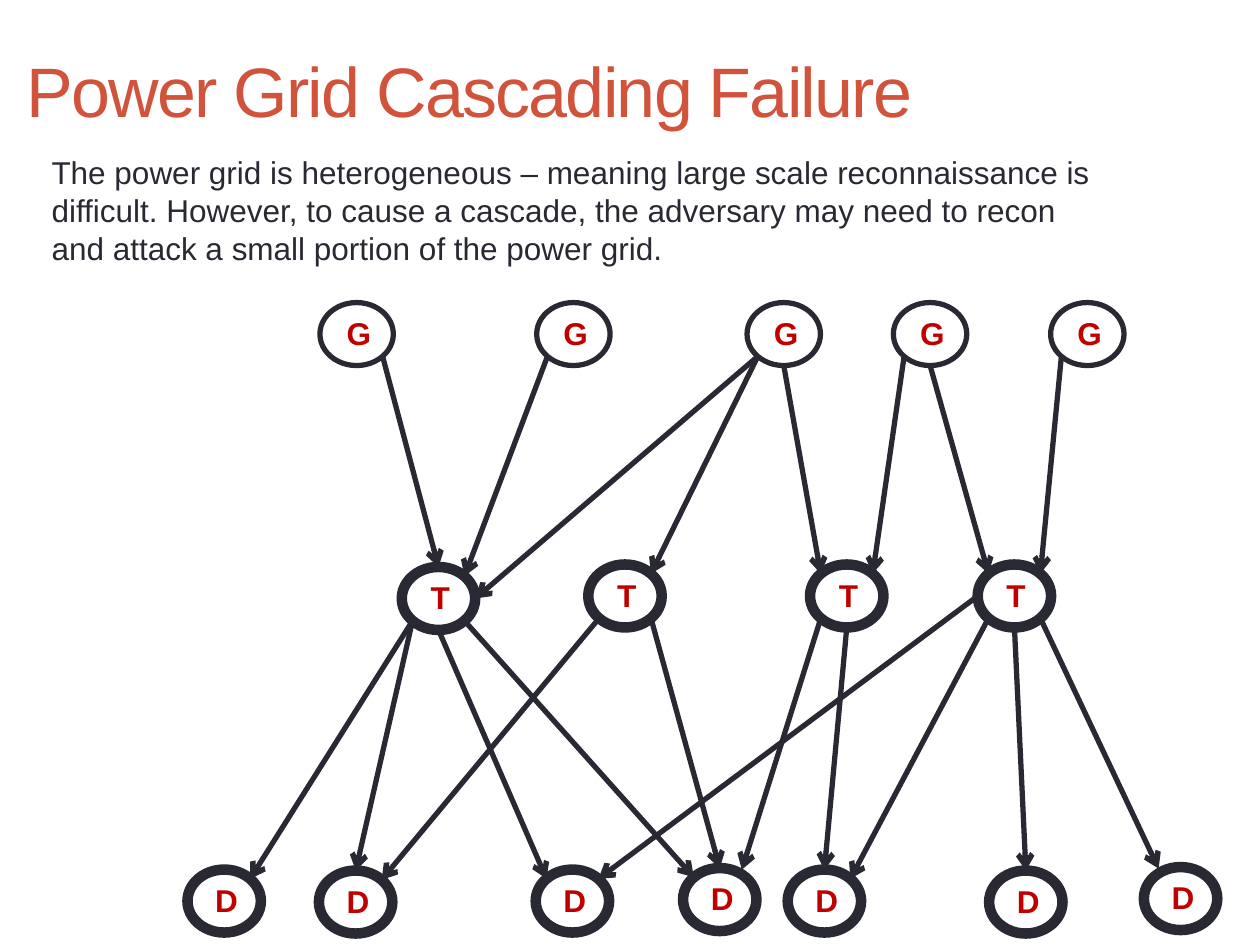
import math
from dataclasses import dataclass

import lxml.etree
import pptx
import pptx.dml.color
import pptx.enum.shapes
import pptx.enum.text
import pptx.oxml.ns
import pptx.util

Cm = pptx.util.Cm
Pt = pptx.util.Pt
qn = pptx.oxml.ns.qn


def rgb(code):
    return pptx.dml.color.RGBColor.from_string(code)


@dataclass(frozen=True)
class Theme:
    font: str = "Arial"
    accent: str = "D2533C"
    ink: str = "292934"
    letter: str = "C00000"
    title_size: int = 40
    body_size: int = 18
    edge_width: int = 3


THEME = Theme()
NODE_WIDTH, NODE_HEIGHT = 1.48, 1.27
LABEL_TOP, LABEL_HEIGHT = 0.1, 1.02
DIAGONAL = math.sqrt(0.5)

SITES = {
    "top": (0, -1),
    "bottom": (0, 1),
    "left": (-1, 0),
    "right": (1, 0),
    "top left": (-DIAGONAL, -DIAGONAL),
    "top right": (DIAGONAL, -DIAGONAL),
    "bottom left": (-DIAGONAL, DIAGONAL),
    "bottom right": (DIAGONAL, DIAGONAL),
    "steep left": (-0.6, -0.95),
    "steep right": (0.6, -0.95),
}

TIERS = {
    "G": {
        "ring": 3, "label_left": 0.29, "label_width": 0.76,
        "nodes": [(2.67, 0), (7.04, 0), (11.28, 0), (14.23, 0), (17.4, 0)],
    },
    "T": {
        "ring": 6, "label_left": 0.33, "label_width": 0.81,
        "nodes": [(4.32, 5.33), (8.08, 5.28), (12.55, 5.28), (15.93, 5.28)],
    },
    "D": {
        "ring": 6, "label_left": 0.31, "label_width": 0.89,
        "nodes": [(0, 11.43), (2.65, 11.45), (7.02, 11.43), (9.99, 11.4),
                  (12.1, 11.43), (16.16, 11.45), (19.28, 11.38)],
    },
}

EDGES = [
    ("G1", "bottom right", "T1", "top"),
    ("G2", "bottom left", "T1", "top right"),
    ("G3", "bottom left", "T1", "right"),
    ("G3", "bottom left", "T2", "top right"),
    ("G3", "bottom", "T3", "top left"),
    ("G4", "bottom left", "T3", "top right"),
    ("G4", "bottom", "T4", "top left"),
    ("G5", "bottom left", "T4", "top right"),
    ("T1", "bottom left", "D1", "top right"),
    ("T1", "bottom left", "D2", "top"),
    ("T1", "bottom", "D3", "top left"),
    ("T1", "bottom right", "D4", "top left"),
    ("T2", "bottom left", "D2", "top right"),
    ("T2", "bottom right", "D4", "top"),
    ("T3", "bottom left", "D4", "steep right"),
    ("T3", "bottom", "D5", "top"),
    ("T4", "left", "D3", "top right"),
    ("T4", "bottom left", "D5", "top right"),
    ("T4", "bottom", "D6", "top"),
    ("T4", "bottom right", "D7", "steep left"),
]


def set_all(target, values):
    for attribute, value in values.items():
        setattr(target, attribute, value)


def add_text(slide, box, wording, size, color, bold=False):
    holder = slide.shapes.add_textbox(*map(Cm, box))
    holder.text_frame.word_wrap = True
    run = holder.text_frame.paragraphs[0].add_run()
    run.text = wording
    set_all(run.font, {"name": THEME.font, "size": Pt(size), "bold": bold})
    run.font.color.rgb = rgb(color)
    return holder


def draw_title(slide, box, wording):
    title = add_text(slide, box, wording, THEME.title_size, THEME.accent)
    title.text_frame.vertical_anchor = pptx.enum.text.MSO_ANCHOR.MIDDLE
    run = title.text_frame.paragraphs[0].runs[0]
    run.font._element.set("spc", "-100")


def draw_summary(slide, box, wording):
    add_text(slide, box, wording, THEME.body_size, THEME.ink)


def draw_edge(slide, start, end):
    edge = slide.shapes.add_connector(
        pptx.enum.shapes.MSO_CONNECTOR.STRAIGHT, *map(Cm, start + end))
    edge.line.width = Pt(THEME.edge_width)
    edge.line.color.rgb = rgb(THEME.ink)
    properties = edge._element.spPr
    tail = lxml.etree.SubElement(properties.find(qn("a:ln")), qn("a:tailEnd"))
    tail.set("type", "arrow")
    lxml.etree.SubElement(properties, qn("a:effectLst"))


def draw_node(slide, left, top, letter, tier):
    node = slide.shapes.add_shape(
        pptx.enum.shapes.MSO_SHAPE.OVAL,
        *map(Cm, (left, top, NODE_WIDTH, NODE_HEIGHT)))
    node.shadow.inherit = False
    node.fill.background()
    node.line.width = Pt(tier["ring"])
    node.line.color.rgb = rgb(THEME.ink)
    label_box = (left + tier["label_left"], top + LABEL_TOP,
                 tier["label_width"], LABEL_HEIGHT)
    add_text(slide, label_box, letter, THEME.body_size, THEME.letter, bold=True)


def site_point(corner, site):
    across, down = SITES[site]
    return (corner[0] + NODE_WIDTH / 2 * (1 + across),
            corner[1] + NODE_HEIGHT / 2 * (1 + down))


def draw_grid(slide, left, top):
    corners = {
        f"{letter}{number}": (left + x, top + y)
        for letter, tier in TIERS.items()
        for number, (x, y) in enumerate(tier["nodes"], 1)
    }
    for source, source_site, target, target_site in EDGES:
        draw_edge(slide, site_point(corners[source], source_site),
                  site_point(corners[target], target_site))
    for name, corner in corners.items():
        draw_node(slide, *corner, name[0], TIERS[name[0]])


def main():
    deck = pptx.Presentation()
    set_all(deck, {"slide_width": Cm(25.4), "slide_height": Cm(19.05)})
    slide = deck.slides.add_slide(deck.slide_layouts[6])
    draw_title(slide, (0.28, -0.03, 25.12, 3.68), "Power Grid Cascading Failure")
    draw_grid(slide, 3.78, 6.1)
    draw_summary(
        slide, (0.79, 2.97, 21.64, 2.57),
        "The power grid is heterogeneous – meaning large scale reconnaissance "
        "is difficult. However, to cause a cascade, the adversary may need to "
        "recon and attack a small portion of the power grid.")
    deck.save("out.pptx")


if __name__ == "__main__":
    main()
